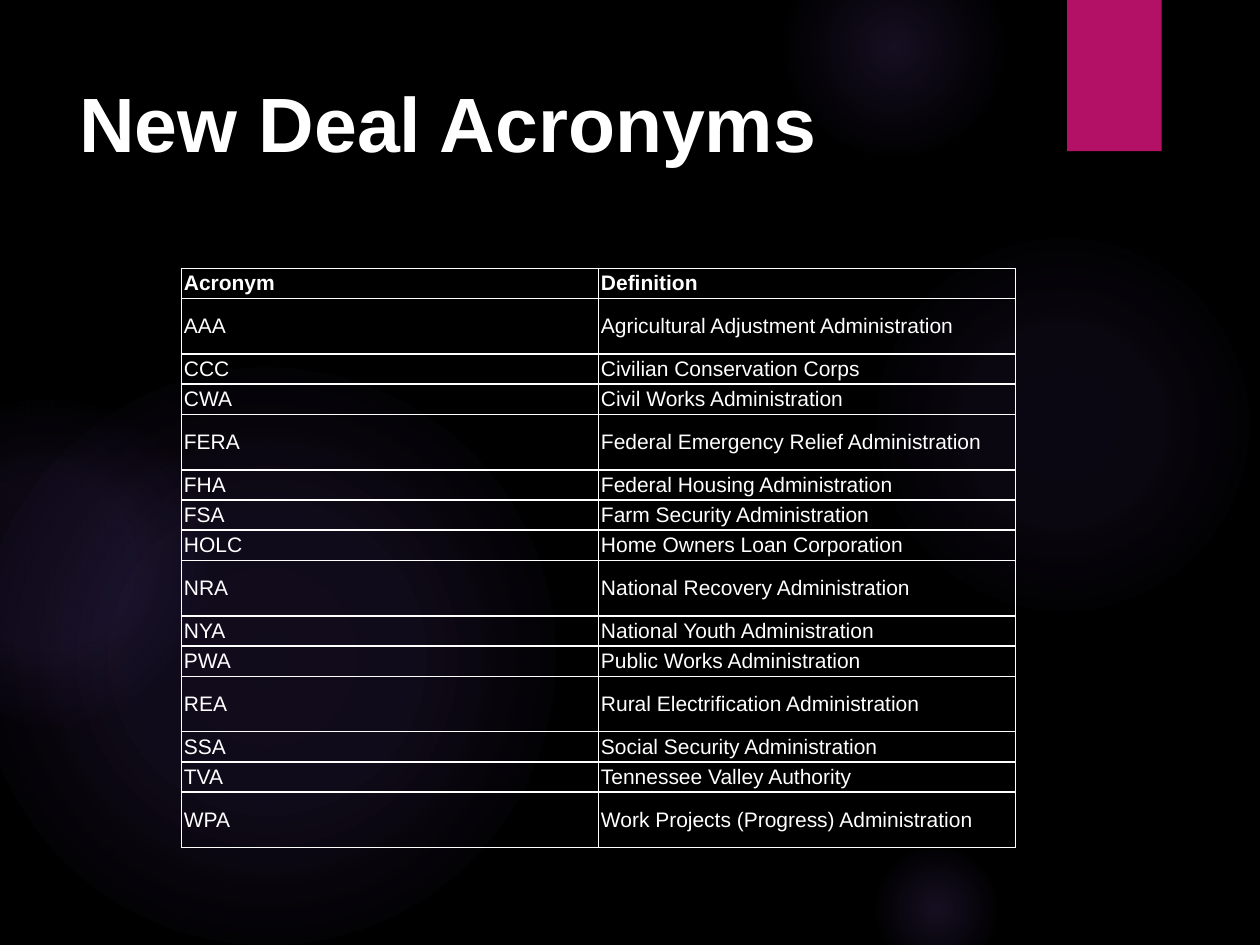
from dataclasses import dataclass

import pptx
import pptx.dml.color
import pptx.enum.shapes
import pptx.enum.text
import pptx.oxml
import pptx.oxml.ns
import pptx.util

Inches = pptx.util.Inches
MIDDLE = pptx.enum.text.MSO_ANCHOR.MIDDLE
TOP = pptx.enum.text.MSO_ANCHOR.TOP
SHAPES = pptx.enum.shapes.MSO_SHAPE

COLORS = {"background": "000000", "glow": "9B6BF2", "accent": "B31166", "text": "FFFFFF"}
FONT = "Arial"
SHORT_ROW, TALL_ROW = 0.24, 0.44
CELL_INSET = 0.02


@dataclass(frozen=True)
class Glow:
    left: float
    top: float
    diameter: float
    center_alpha: int
    middle_alpha: int
    fade_end: int


@dataclass(frozen=True)
class Entry:
    acronym: str
    definition: str
    height: float = SHORT_ROW


GLOWS = [
    Glow(6.89, 1.83, 3.08, 7, 6, 69),
    Glow(6.22, -0.5, 1.75, 14, 7, 73),
    Glow(6.89, 6.67, 1.08, 14, 7, 66),
    Glow(-0.17, 2.92, 4.58, 11, 10, 75),
    Glow(-0.92, 3.17, 2.58, 8, 8, 72),
]

ENTRIES = [
    Entry("Acronym", "Definition"),
    Entry("AAA", "Agricultural Adjustment Administration", TALL_ROW),
    Entry("CCC", "Civilian Conservation Corps"),
    Entry("CWA", "Civil Works Administration"),
    Entry("FERA", "Federal Emergency Relief Administration", TALL_ROW),
    Entry("FHA", "Federal Housing Administration"),
    Entry("FSA", "Farm Security Administration"),
    Entry("HOLC", "Home Owners Loan Corporation"),
    Entry("NRA", "National Recovery Administration", TALL_ROW),
    Entry("NYA", "National Youth Administration"),
    Entry("PWA", "Public Works Administration"),
    Entry("REA", "Rural Electrification Administration", TALL_ROW),
    Entry("SSA", "Social Security Administration"),
    Entry("TVA", "Tennessee Valley Authority"),
    Entry("WPA", "Work Projects (Progress) Administration", TALL_ROW),
]


def rgb(name: str) -> pptx.dml.color.RGBColor:
    return pptx.dml.color.RGBColor.from_string(COLORS[name])


def write_text(frame, text: str, *, size: float, bold: bool = False, color: str = "text") -> None:
    frame.word_wrap = True
    run = frame.paragraphs[0].add_run()
    run.text = text
    run.font.name = FONT
    run.font.size = pptx.util.Pt(size)
    run.font.bold = bold
    run.font.color.rgb = rgb(color)


def add_plain_shape(slide, kind, left: float, top: float, width: float, height: float):
    shape = slide.shapes.add_shape(kind, Inches(left), Inches(top), Inches(width), Inches(height))
    shape.shadow.inherit = False
    shape.line.fill.background()
    return shape


def add_glow(slide, glow: Glow) -> None:
    """Draw a circle whose translucent colour fades out from its centre."""
    circle = add_plain_shape(
        slide, SHAPES.OVAL, glow.left, glow.top, glow.diameter, glow.diameter
    )
    stops = [(0, glow.center_alpha), (36, glow.middle_alpha), (glow.fade_end, 0)]
    stop_xml = "".join(
        f'<a:gs pos="{position * 1000}"><a:srgbClr val="{COLORS["glow"]}">'
        f'<a:alpha val="{alpha * 1000}"/></a:srgbClr></a:gs>'
        for position, alpha in stops
    )
    gradient = pptx.oxml.parse_xml(
        f'<a:gradFill {pptx.oxml.ns.nsdecls("a")} rotWithShape="1"><a:gsLst>{stop_xml}</a:gsLst>'
        '<a:path path="circle"><a:fillToRect l="50000" t="50000" r="50000" b="50000"/></a:path>'
        "</a:gradFill>"
    )
    properties = circle._element.spPr
    properties.find(pptx.oxml.ns.qn("a:prstGeom")).addnext(gradient)


def add_borders(cell, color: str, width: float) -> None:
    properties = cell._tc.get_or_add_tcPr()
    for index, side in enumerate(("lnL", "lnR", "lnT", "lnB")):
        border = pptx.oxml.parse_xml(
            f'<a:{side} {pptx.oxml.ns.nsdecls("a")} w="{pptx.util.Pt(width)}">'
            f'<a:solidFill><a:srgbClr val="{COLORS[color]}"/></a:solidFill></a:{side}>'
        )
        properties.insert(index, border)


def add_title(slide, text: str) -> None:
    title = slide.shapes.add_textbox(Inches(0.53), Inches(0.5), Inches(7.72), Inches(1.53))
    title.text_frame.vertical_anchor = TOP
    title.text_frame.margin_top = Inches(0.1)
    write_text(title.text_frame, text, size=44, bold=True)


def add_acronym_table(slide, entries: list[Entry]) -> None:
    total_height = sum(entry.height for entry in entries)
    table = slide.shapes.add_table(
        len(entries), 2, Inches(1.44), Inches(2.13), Inches(6.62), Inches(total_height)
    ).table
    table.horz_banding = False
    for row_index, entry in enumerate(entries):
        row = table.rows[row_index]
        row.height = Inches(entry.height)
        for cell, text in zip(row.cells, (entry.acronym, entry.definition)):
            cell.margin_left = cell.margin_right = Inches(CELL_INSET)
            cell.margin_top = cell.margin_bottom = Inches(CELL_INSET)
            cell.vertical_anchor = MIDDLE
            cell.fill.background()
            add_borders(cell, "text", 1)
            write_text(cell.text_frame, text, size=12, bold=row_index == 0)


def main() -> None:
    deck = pptx.Presentation()
    deck.slide_width, deck.slide_height = Inches(10), Inches(7.5)
    slide = deck.slides.add_slide(deck.slide_layouts[6])
    slide.background.fill.solid()
    slide.background.fill.fore_color.rgb = rgb("background")

    for glow in GLOWS:
        add_glow(slide, glow)

    ribbon = add_plain_shape(slide, SHAPES.RECTANGLE, 8.47, 0, 0.75, 1.2)
    ribbon.fill.solid()
    ribbon.fill.fore_color.rgb = rgb("accent")

    add_title(slide, "New Deal Acronyms")
    add_acronym_table(slide, ENTRIES)
    deck.save("out.pptx")


if __name__ == "__main__":
    main()
